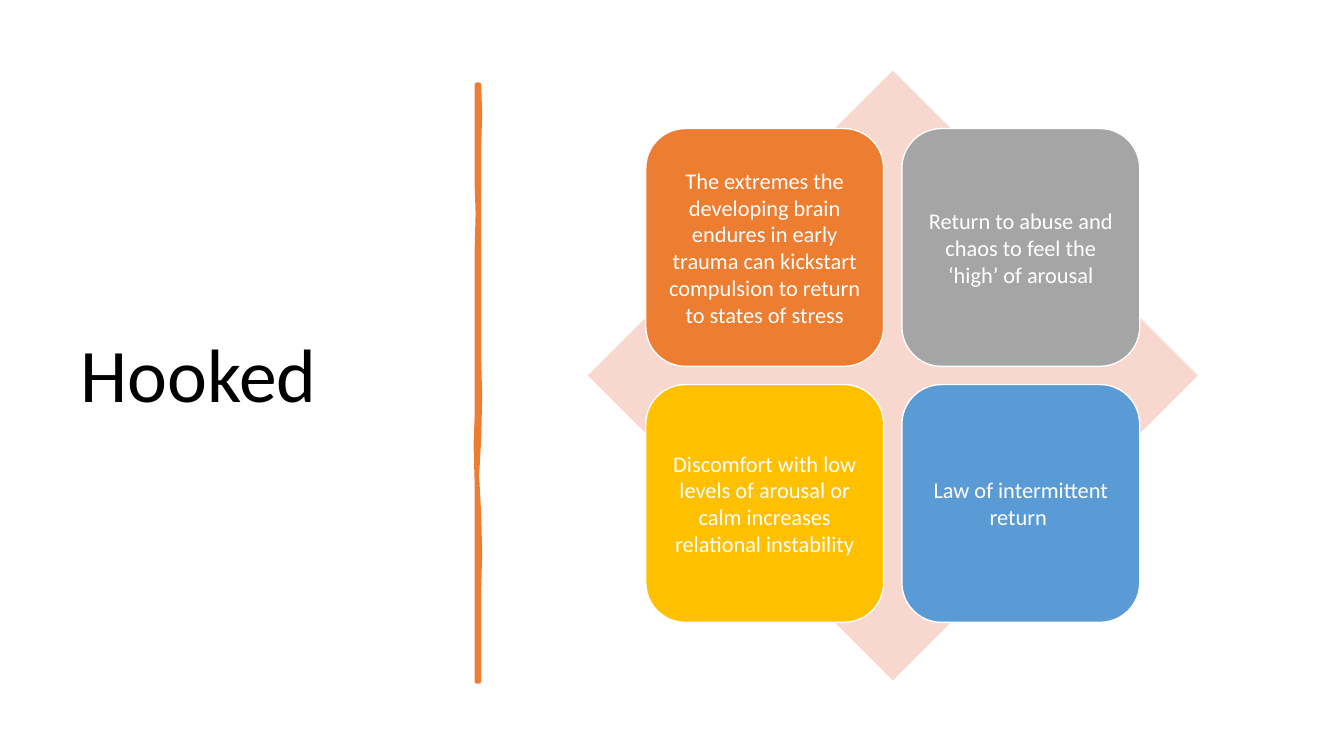
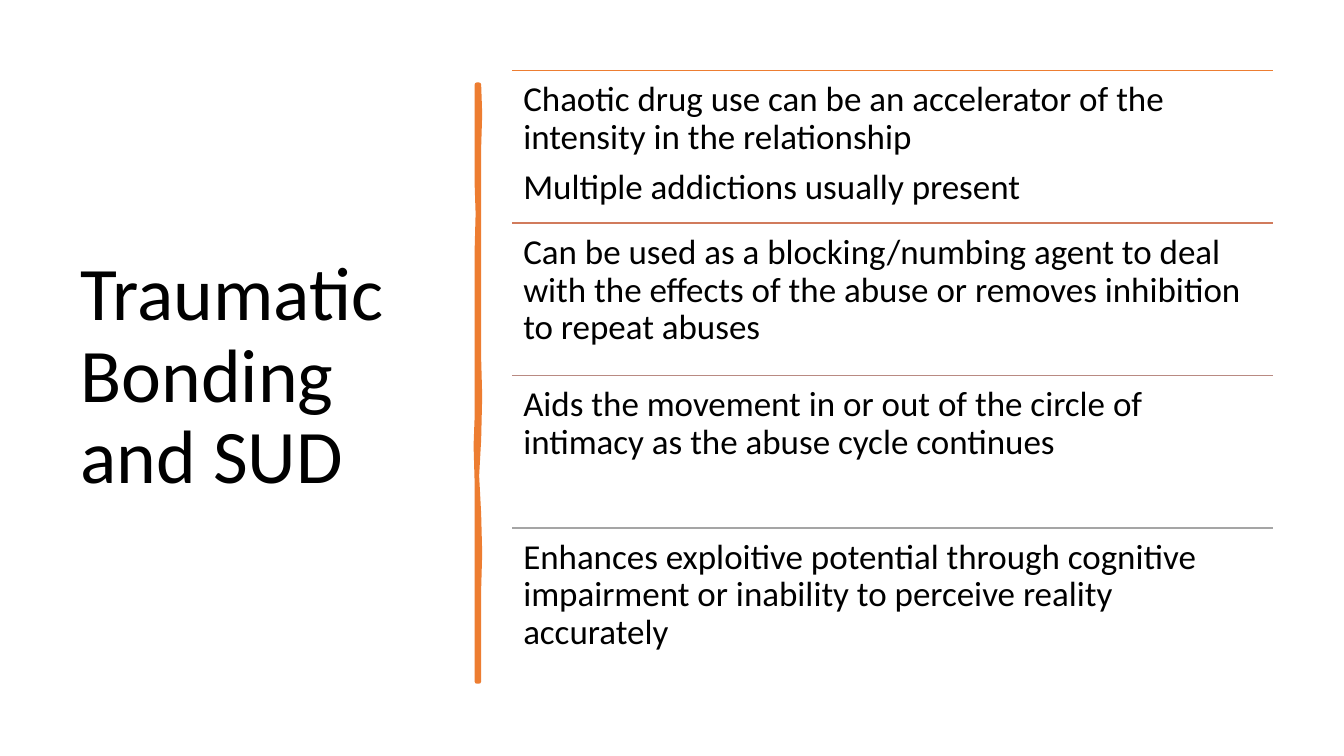
import pptx
import pptx.util
import pptx.dml.color
import pptx.enum.shapes
import pptx.enum.text
import pptx.oxml.ns
import lxml.etree

Inches = pptx.util.Inches
Pt = pptx.util.Pt
SHAPES = pptx.enum.shapes.MSO_SHAPE
ANCHOR = pptx.enum.text.MSO_ANCHOR
ALIGN = pptx.enum.text.PP_ALIGN

FONT = "Calibri"
COLORS = {
    "text": "000000",
    "white": "FFFFFF",
    "orange": "ED7D31",
    "gray": "A5A5A5",
    "gold": "FFC000",
    "blue": "5B9BD5",
    "blush": "F8D7CE",
    "terracotta": "D17B5C",
    "mauve": "B98A82",
}

HOOKED_TITLE = "Hooked"
HOOKED_CARDS = [
    ("The extremes the developing brain endures in early trauma can kickstart "
     "compulsion to return to states of stress", "orange"),
    ("Return to abuse and chaos to feel the ‘high’ of arousal", "gray"),
    ("Discomfort with low levels of arousal or calm increases relational instability", "gold"),
    ("Law of intermittent return ", "blue"),
]

BONDING_TITLE = "Traumatic Bonding and SUD"
BONDING_ROWS = [
    (["Chaotic drug use can be an accelerator of the intensity in the relationship",
      "Multiple addictions usually present"], "orange"),
    (["Can be used as a blocking/numbing agent to deal with the effects of the abuse "
      "or removes inhibition to repeat abuses"], "terracotta"),
    (["Aids the movement in or out of the circle of intimacy as the abuse cycle continues"],
     "mauve"),
    (["Enhances exploitive potential through cognitive impairment or inability to "
      "perceive reality accurately"], "gray"),
]

BRUSH_OUTLINE = [
    (4.75, 0.84), (4.76, 1.13), (4.75, 1.46), (4.75, 1.85), (4.75, 2.26), (4.75, 2.94),
    (4.75, 3.56), (4.76, 3.93), (4.75, 4.36), (4.73, 4.72), (4.75, 5.10), (4.76, 5.49),
    (4.75, 5.84), (4.75, 6.27), (4.75, 6.76), (4.73, 6.76), (4.73, 6.13), (4.73, 5.57),
    (4.73, 4.77), (4.72, 4.42), (4.73, 4.15), (4.73, 3.35), (4.73, 2.50), (4.74, 2.12),
    (4.73, 1.81), (4.73, 1.33), (4.73, 0.84),
]


def color(name):
    return pptx.dml.color.RGBColor.from_string(COLORS[name])


def paint(shape, fill, line=None, line_width=1):
    shape.shadow.inherit = False
    shape.fill.solid()
    shape.fill.fore_color.rgb = color(fill)
    if line:
        shape.line.color.rgb = color(line)
        shape.line.width = Pt(line_width)
    else:
        shape.line.fill.background()


def write(shape, texts, size, ink="text", anchor=ANCHOR.TOP, align=ALIGN.LEFT,
          margins=(0.1, 0.05), line_spacing=0.9, space_after=0):
    frame = shape.text_frame
    frame.word_wrap = True
    frame.vertical_anchor = anchor
    frame.margin_left = frame.margin_right = Inches(margins[0])
    frame.margin_top = frame.margin_bottom = Inches(margins[1])
    for index, text in enumerate(texts):
        paragraph = frame.add_paragraph() if index else frame.paragraphs[0]
        paragraph.alignment = align
        paragraph.line_spacing = line_spacing
        paragraph.space_after = Pt(space_after)
        run = paragraph.add_run()
        run.text = text
        run.font.name = FONT
        run.font.size = Pt(size)
        run.font.color.rgb = color(ink)


def add_brush_divider(slide):
    start, *points = [(Inches(x), Inches(y)) for x, y in BRUSH_OUTLINE]
    builder = slide.shapes.build_freeform(*start)
    builder.add_line_segments(points, close=True)
    paint(builder.convert_to_shape(), "orange", "orange", 3.25)


def add_titled_slide(presentation, title):
    slide = presentation.slides.add_slide(presentation.slide_layouts[6])
    box = slide.shapes.add_textbox(Inches(0.7), Inches(0.69), Inches(3.74), Inches(6.11))
    write(box, [title], 54, anchor=ANCHOR.MIDDLE)
    add_brush_divider(slide)
    return slide


def add_card_matrix(slide, cards):
    diamond_left, diamond_top, diamond_size = 5.83, 0.7, 6.05
    card_size, gap = 2.36, 0.18
    diamond = slide.shapes.add_shape(
        SHAPES.DIAMOND, Inches(diamond_left), Inches(diamond_top),
        Inches(diamond_size), Inches(diamond_size))
    paint(diamond, "blush")
    pitch = card_size + gap
    inset = (diamond_size - card_size - pitch) / 2
    for index, (text, fill) in enumerate(cards):
        row, column = divmod(index, 2)
        card = slide.shapes.add_shape(
            SHAPES.ROUNDED_RECTANGLE, Inches(diamond_left + inset + column * pitch),
            Inches(diamond_top + inset + row * pitch), Inches(card_size), Inches(card_size))
        paint(card, fill, "white")
        write(card, [text], 16, "white", ANCHOR.MIDDLE, ALIGN.CENTER, (0.07, 0.07), 1.0)


def add_ruled_rows(slide, rows):
    left, top, width, height = 5.08, 0.7, 7.55, 6.05
    row_height = height / len(rows)
    for index, (texts, line_color) in enumerate(rows):
        y = Inches(top + index * row_height)
        rule = slide.shapes.add_connector(
            pptx.enum.shapes.MSO_CONNECTOR.STRAIGHT, Inches(left), y, Inches(left + width), y)
        rule.line.color.rgb = color(line_color)
        rule.line.width = Pt(1)
        lxml.etree.SubElement(rule._element.spPr, pptx.oxml.ns.qn("a:effectLst"))
        box = slide.shapes.add_textbox(Inches(left), y, Inches(width), Inches(row_height))
        write(box, texts, 25, margins=(0.11, 0.11), space_after=8.75)


def main():
    presentation = pptx.Presentation()
    presentation.slide_width = Inches(13.33)
    presentation.slide_height = Inches(7.5)
    add_card_matrix(add_titled_slide(presentation, HOOKED_TITLE), HOOKED_CARDS)
    add_ruled_rows(add_titled_slide(presentation, BONDING_TITLE), BONDING_ROWS)
    presentation.save("out.pptx")


if __name__ == "__main__":
    main()
